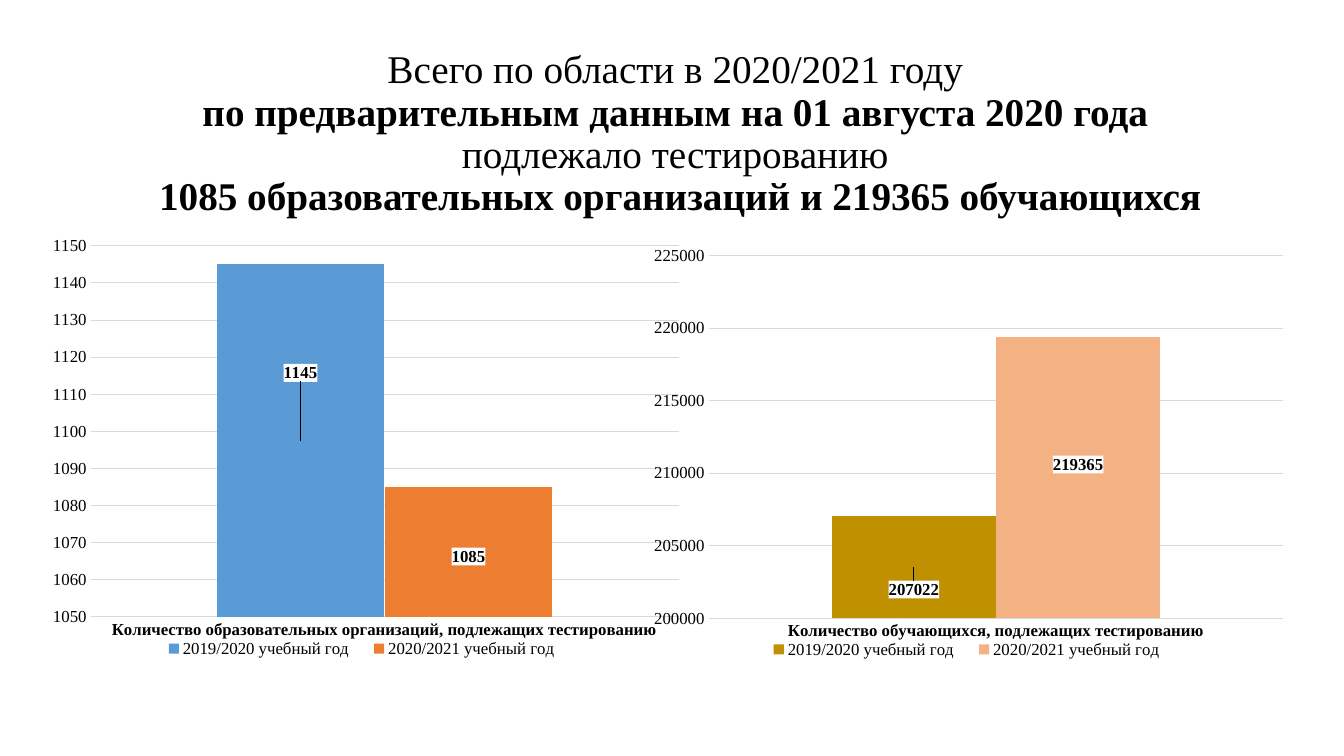
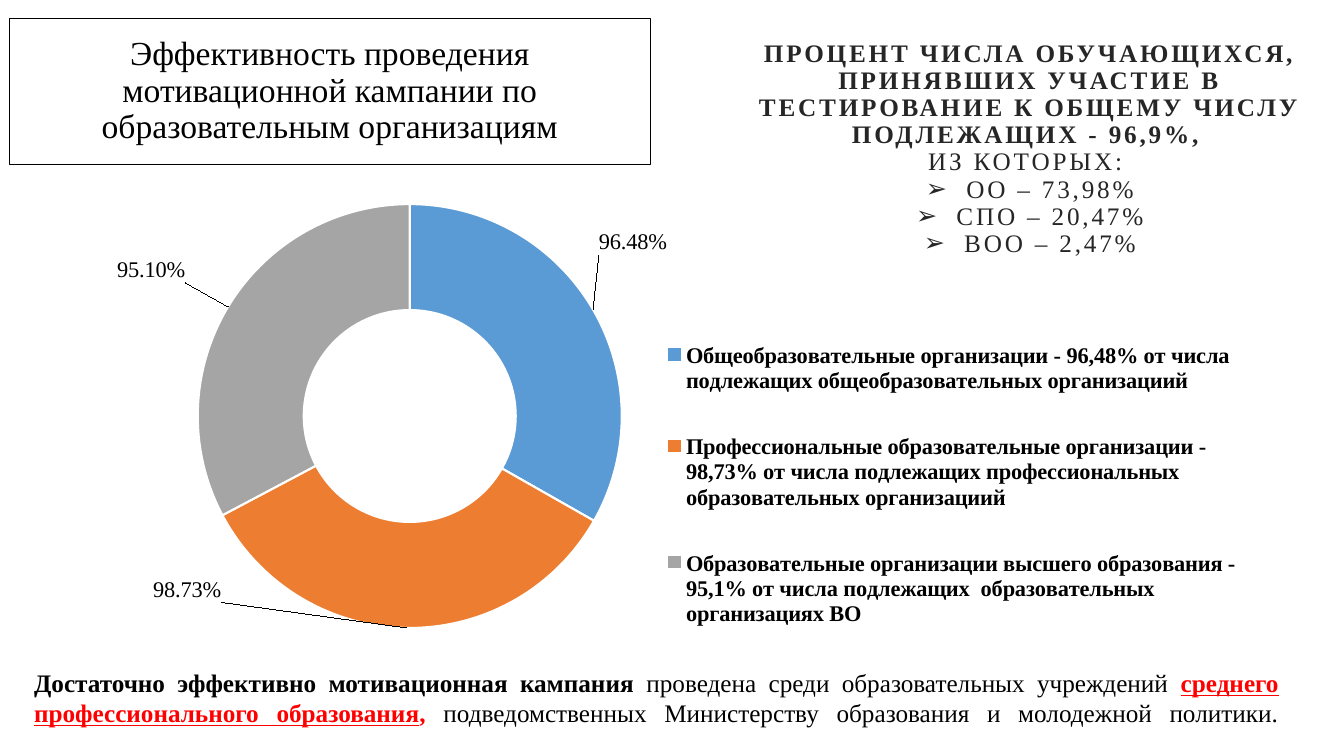
import pptx
import pptx.util
import pptx.chart.data
import pptx.dml.color
import pptx.enum.chart
import pptx.enum.shapes
import pptx.enum.text
import pptx.oxml
import pptx.oxml.ns
from pptx.util import Inches

SERIF = "Times New Roman"
BLACK, WHITE, DARK, RED, GRID = "000000", "FFFFFF", "262626", "FF0000", "D9D9D9"
BLUE, ORANGE, GREY, GOLD, PEACH = "5B9BD5", "ED7D31", "A5A5A5", "BF9000", "F4B183"
YEARS = ["2019/2020 учебный год", "2020/2021 учебный год"]
ALIGN = pptx.enum.text.PP_ALIGN
CHART = pptx.enum.chart


def rgb(value):
    return pptx.dml.color.RGBColor.from_string(value)


def xml(text):
    tag_end = min(i for i in (text.find(" "), text.find(">"), text.find("/>")) if i > 0)
    return pptx.oxml.parse_xml(
        text[:tag_end] + " " + pptx.oxml.ns.nsdecls("a", "c") + text[tag_end:])


def place(parent, index, inner=False, **fractions):
    for old in parent.xpath("c:layout"):
        parent.remove(old)
    parts = ['<c:layoutTarget val="inner"/>'] if inner else []
    if "w" in fractions:
        parts += [f'<c:{k}Mode val="edge"/>' for k in "xy"]
    parts += [f'<c:{k} val="{v}"/>' for k, v in fractions.items()]
    parent.insert(index, xml(
        f"<c:layout><c:manualLayout>{''.join(parts)}</c:manualLayout></c:layout>"))


class Deck:
    """Holds the shared style and the current slide."""

    def __init__(self):
        self.prs = pptx.Presentation()
        self.prs.slide_width, self.prs.slide_height = Inches(13.33), Inches(7.5)
        self.s = None

    def font(self, font, size, color=BLACK, bold=False, name=SERIF):
        font.name, font.size, font.bold = name, pptx.util.Pt(size), bold
        font.color.rgb = rgb(color)

    def runs(self, p, runs, size, align=ALIGN.CENTER, spacing=0.9, color=BLACK):
        p.alignment, p.line_spacing = align, spacing
        for text, style in runs:
            r = p.add_run()
            r.text = text.rstrip("\n")
            self.font(r.font, size, style.get("color", color), style.get("bold", False))
            r.font.underline = style.get("underline")
            if text.endswith("\n"):
                p.add_line_break()

    def frame(self, sp, anchor, inset=None):
        tf = sp.text_frame
        tf.word_wrap, tf.vertical_anchor = True, anchor
        tf.auto_size = pptx.enum.text.MSO_AUTO_SIZE.NONE
        if inset is not None:
            tf.margin_left = tf.margin_right = inset
            tf.margin_top = tf.margin_bottom = inset
        return tf

    def slide(self, box, runs, size, border=None):
        self.s = self.prs.slides.add_slide(self.prs.slide_layouts[5])
        sp = self.s.shapes.title
        sp.left, sp.top, sp.width, sp.height = map(Inches, box)
        tf = self.frame(sp, pptx.enum.text.MSO_ANCHOR.MIDDLE)
        self.runs(tf.paragraphs[0], runs, size)
        if border:
            sp.line.color.rgb = rgb(border)
            sp.line.width = pptx.util.Pt(0.75)

    def panel(self, box, lines, bullets):
        sp = self.s.shapes.add_shape(
            pptx.enum.shapes.MSO_SHAPE.RECTANGLE, *map(Inches, box))
        sp.shadow.inherit = False
        sp.fill.solid()
        sp.fill.fore_color.rgb = rgb(WHITE)
        sp.line.color.rgb = rgb(WHITE)
        sp.line.width = pptx.util.Pt(2.5)
        tf = self.frame(sp, pptx.enum.text.MSO_ANCHOR.MIDDLE, Inches(0.2))
        for i, (text, style) in enumerate(lines + [(b, {}) for b in bullets]):
            p = tf.add_paragraph() if i else tf.paragraphs[0]
            self.runs(p, [(text, style)], 18, color=DARK)
            p.runs[0].font._element.set("spc", "200")
            if i >= len(lines):
                pPr = p._p.get_or_add_pPr()
                pPr.set("marL", str(Inches(0.31)))
                pPr.set("indent", str(-Inches(0.31)))
                pPr.append(xml('<a:buFont typeface="Arial"/>'))
                pPr.append(xml('<a:buChar char="➢"/>'))

    def text(self, box, runs, size):
        sp = self.s.shapes.add_textbox(*map(Inches, box))
        tf = self.frame(sp, pptx.enum.text.MSO_ANCHOR.TOP)
        self.runs(tf.paragraphs[0], runs, size, ALIGN.JUSTIFY, 1.0)

    def chart(self, kind, box, cats, series, plot, legend, legend_size, bold=False,
              number_format="General"):
        data = pptx.chart.data.CategoryChartData(number_format=number_format)
        data.categories = cats
        for name, values in series:
            data.add_series(name, values)
        chart = self.s.shapes.add_chart(kind, *map(Inches, box), data).chart
        self.font(chart.font, 10, name="Calibri")
        chart.has_title = False
        chart.has_legend = True
        chart.legend.position = CHART.XL_LEGEND_POSITION.BOTTOM
        chart.legend.include_in_layout = False
        self.font(chart.legend.font, legend_size, bold=bold)
        place(chart._chartSpace.xpath("c:chart/c:plotArea")[0], 0, True, **plot)
        place(chart._chartSpace.xpath("c:chart/c:legend")[0], 1, **legend)
        return chart

    def point(self, point, color, size, bold, shift, position=None):
        point.format.fill.solid()
        point.format.fill.fore_color.rgb = rgb(color)
        label = point.data_label
        self.font(label.font, size, bold=bold)
        if position is not None:
            label.position = position
        dLbl = label._get_or_add_dLbl()
        place(dLbl, 1, x=shift[0], y=shift[1])
        return dLbl

    def columns(self, box, cat, values, colors, scale, plot, shifts):
        chart = self.chart(CHART.XL_CHART_TYPE.COLUMN_CLUSTERED, box, [cat],
                           [(n, [v]) for n, v in zip(YEARS, values)], plot,
                           dict(x=0.17, y=0.9, w=0.65, h=0.06), 12)
        bars = chart.plots[0]
        bars.gap_width, bars.overlap, bars.vary_by_categories = 150, 0, False
        for axis, bold in ((chart.category_axis, True), (chart.value_axis, False)):
            axis.major_tick_mark = axis.minor_tick_mark = CHART.XL_TICK_MARK.NONE
            axis.format.line.fill.background()
            self.font(axis.tick_labels.font, 12, bold=bold)
        axis = chart.value_axis
        axis.minimum_scale, axis.maximum_scale, axis.major_unit = scale
        axis.major_gridlines.format.line.color.rgb = rgb(GRID)
        axis.major_gridlines.format.line.width = pptx.util.Pt(0.75)
        for ser, color, shift in zip(bars.series, colors, shifts):
            ser.format.fill.solid()
            ser.format.fill.fore_color.rgb = rgb(color)
            dLbl = self.point(ser.points[0], color, 12, True, (0, shift),
                              CHART.XL_LABEL_POSITION.CENTER)
            for old in dLbl.xpath("c:spPr"):
                dLbl.remove(old)
            dLbl.insert(2, xml('<c:spPr><a:solidFill><a:srgbClr val="%s"/>'
                               '</a:solidFill></c:spPr>' % WHITE))

    def doughnut(self, box, cats, values, colors, plot, legend, shifts):
        chart = self.chart(CHART.XL_CHART_TYPE.DOUGHNUT, box, cats,
                           [("Series 1", values)], plot, legend, 16, True, "0.00%")
        ring = chart.plots[0]
        ring.vary_by_categories = True
        chart._chartSpace.xpath(".//c:holeSize")[0].set("val", "75")
        for i, (color, shift) in enumerate(zip(colors, shifts)):
            point = ring.series[0].points[i]
            self.point(point, color, 16, False, shift)
            point.format.line.color.rgb = rgb(WHITE)
            point.format.line.width = pptx.util.Pt(1.5)


def main():
    deck = Deck()
    bold = {"bold": True}
    deck.slide((1.01, 0.41, 11.47, 1.85), [
        ("Всего по области в 2020/2021 году \n", {}),
        ("по предварительным данным на 01 августа 2020 года \n", bold),
        ("подлежало тестированию \n", {}),
        ("1085 образовательных организаций и 219365 обучающихся", bold)], 28)
    deck.columns((0.38, 2.26, 6.48, 4.49),
                 "Количество образовательных организаций, подлежащих тестированию",
                 (1145, 1085), (BLUE, ORANGE), (1050, 1150, 10),
                 dict(x=0.08, y=0.04, w=0.9, h=0.82), (-0.15, 0.01))
    deck.columns((6.38, 2.36, 6.48, 4.39),
                 "Количество обучающихся, подлежащих тестированию",
                 (207022, 219365), (GOLD, PEACH), (200000, 225000, 5000),
                 dict(x=0.1, y=0.04, w=0.88, h=0.82), (0.05, -0.03))

    deck.slide((0.09, 0.18, 6.36, 1.45), [
        ("Эффективность проведения мотивационной кампании по "
         "образовательным организациям", {})], 24, BLACK)
    deck.doughnut((0.24, 1.83, 12.14, 4.89), [
        "Общеобразовательные организации - 96,48% от числа подлежащих "
        "общеобразовательных организациий ",
        "Профессиональные образовательные организации - 98,73% от числа подлежащих "
        "профессиональных образовательных организациий",
        "Образовательные организации высшего образования - 95,1% от числа подлежащих "
        " образовательных организациях ВО"],
        (0.9648, 0.9873, 0.951), (BLUE, ORANGE, GREY),
        dict(x=0.09, y=0.04, w=0.45, h=0.86), dict(x=0.53, y=0.24, w=0.47, h=0.74),
        ((0.07, -0.19), (-0.18, 0.03), (-0.1, -0.13)))
    deck.panel((7.3, 0.18, 5.83, 2.6), [
        ("ПРОЦЕНТ ЧИСЛА ОБУЧАЮЩИХСЯ, ПРИНЯВШИХ УЧАСТИЕ В ТЕСТИРОВАНИЕ К ОБЩЕМУ "
         "ЧИСЛУ ПОДЛЕЖАЩИХ - 96,9%, ", bold),
        ("ИЗ КОТОРЫХ: ", {})],
        (" ОО – 73,98%", " СПО – 20,47%", " ВОО – 2,47%"))
    deck.text((0.24, 6.57, 12.54, 1.01), [
        ("Достаточно эффективно мотивационная кампания ", bold),
        ("проведена среди образовательных учреждений ", {}),
        ("среднего профессионального образования",
         {"color": RED, "bold": True, "underline": True}),
        (",", {"color": RED, "bold": True}),
        (" подведомственных Министерству образования и молодежной политики.\n", {})], 18)
    deck.prs.save("out.pptx")


if __name__ == "__main__":
    main()
